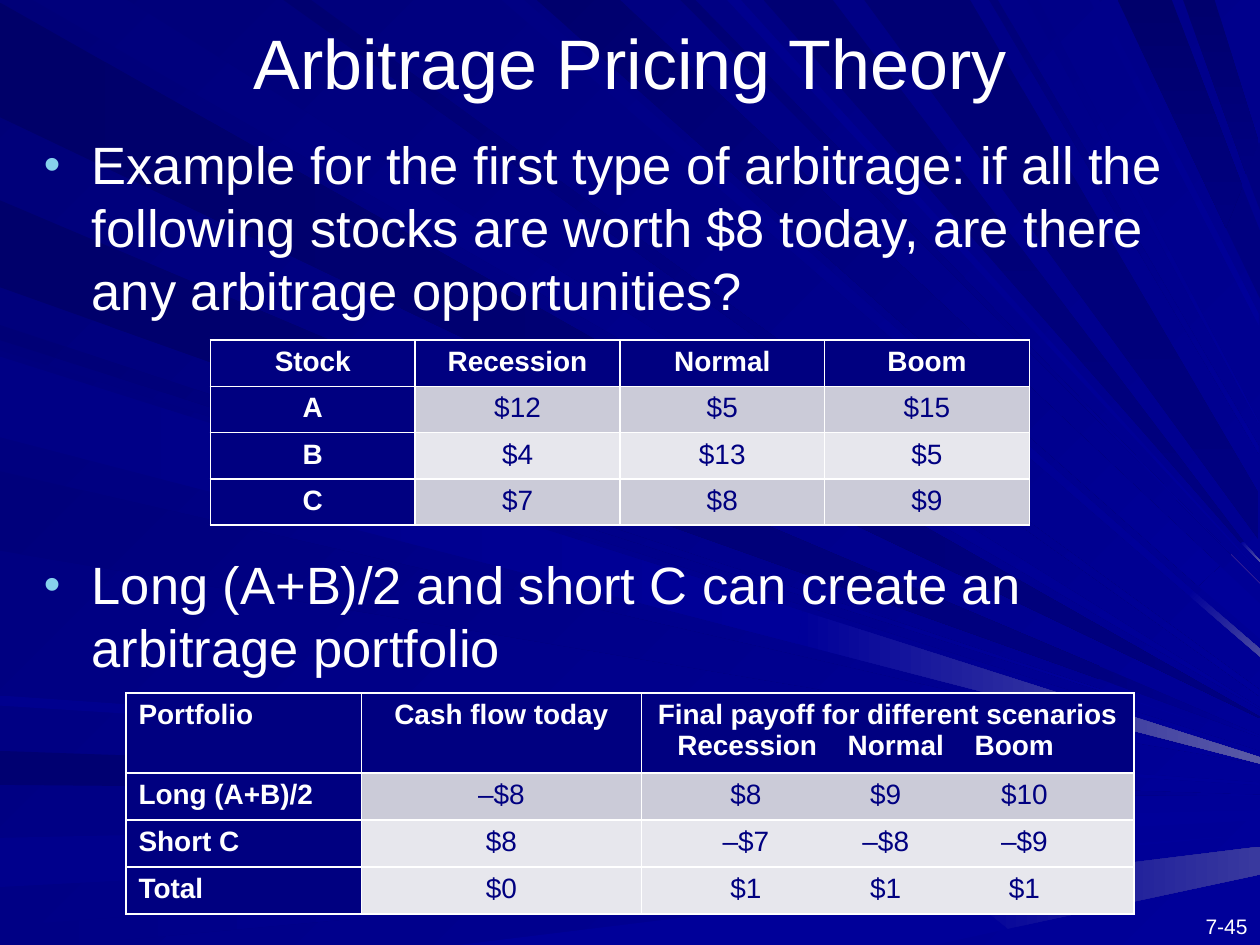
from typing import NamedTuple, Optional

from lxml import etree
from pptx import Presentation
from pptx import util as u
from pptx.dml.color import RGBColor
from pptx.enum import text
from pptx.oxml.ns import qn

COLORS = {
    "white": "FFFFFF", "navy": "000080", "blue": "000099", "night": "000078",
    "bullet": "86D1EC", "band_dark": "CBCBD8", "band_light": "E7E7ED",
}
FONT = "Arial"
SLIDE_W, SLIDE_H = u.Inches(10), u.Inches(7.5)
UNIT = SLIDE_W // 1000  # all lengths below are thousandths of the slide width


class Ray(NamedTuple):
    outline: str
    start: str
    end: Optional[str] = None
    angle: int = 0


class Box(NamedTuple):
    left: int
    top: int
    width: int
    height: int


class Style(NamedTuple):
    size: int
    color: str = "white"
    bold: bool = False


class Grid(NamedTuple):
    box: Box
    columns: tuple
    rows: tuple
    cells: tuple
    bands: tuple
    label_align: text.PP_ALIGN


LEFT, CENTER, RIGHT = text.PP_ALIGN.LEFT, text.PP_ALIGN.CENTER, text.PP_ALIGN.RIGHT
NAVY, BLUE = COLORS["navy"], COLORS["blue"]

# Background rays, from back to front
RAYS = (
    Ray("556,317 0,2 0,93 529,345 1000,570 1000,569", "000069", NAVY),
    Ray("577,298 101,0 26,0 563,310 1000,563 1000,562", "00007B", BLUE, 45),
    Ray("0,623 701,629 701,621 0,596", "000071", NAVY),
    Ray("1000,632 1000,631 701,621 701,629", NAVY, BLUE),
    Ray("0,704 831,660 831,647 0,665", "00008C", BLUE),
    Ray("1000,651 1000,643 831,647 831,660", BLUE),
    Ray("1000,662 628,689 628,697", BLUE),
    Ray("0,750 54,750 628,697 628,689 0,735", "000085", BLUE),
    Ray("742,750 801,737 756,702 364,750", BLUE),
    Ray("1000,694 1000,672 756,702 800,737", BLUE, "39399E"),
    Ray("1000,589 873,547 873,548", BLUE),
    Ray("0,270 873,548 873,547 0,258", "000076", BLUE, 45),
    Ray("1000,585 1000,584 873,529 873,539", NAVY, BLUE),
    Ray("0,228 873,539 873,529 0,159", "00006B", NAVY),
    Ray("398,0 944,473 947,469 416,0", "000083", BLUE, 45),
    Ray("1000,521 1000,515 947,469 944,473", BLUE, "4A4AA1", 45),
    Ray("1000,507 1000,479 968,449 951,465", BLUE),
    Ray("426,0 951,465 968,449 492,0", "00006D", BLUE, 45),
    Ray("1000,463 977,440 977,440", "FF9999"),
    Ray("540,0 977,440 977,440 552,0", "000073", BLUE, 45),
    Ray("606,0 985,431 987,430 661,0", "000073", NAVY, 90),
    Ray("1000,446 1000,445 987,430 985,431", BLUE, "5A5AA6", 45),
    Ray("1000,237 1000,183 986,148 973,181", NAVY),
    Ray("887,0 973,181 986,148 930,0", "00006B", NAVY, 90),
    Ray("964,0 939,0 989,138 999,113", "00006D", NAVY, 90),
    Ray("989,138 1000,167 1000,114 999,113", NAVY),
    Ray("0,342 999,602 999,596 0,278", "00007E", BLUE, 45),
    Ray("0,437 999,606 999,605 0,374", "00007B", BLUE, 45),
    Ray("0,560 999,623 999,621 0,552", "00008E", BLUE),
    Ray("225,0 999,552 999,547 247,0", "000070", BLUE, 45),
    Ray("577,0 999,454 999,453 588,0", "00008E", BLUE, 45),
    Ray("770,0 686,0 999,428 999,390 998,390", "000073", NAVY, 90),
    Ray("785,0 999,360 999,354 792,0", "000078", BLUE, 45),
    Ray("815,0 999,336 999,335 824,0", "000085", BLUE, 45),
    Ray("999,249 872,0 865,0 999,258", "00008A", BLUE, 45),
    Ray("0,283 0,347 633,511 635,498 637,485", "000085", BLUE),
    Ray("1000,601 637,485 635,498 633,511 1000,606", BLUE, "5A5AA6"),
)

STOCKS = Grid(
    Box(167, 270, 650, 139), (1, 1, 1, 1), (1, 1, 1, 1),
    (("Stock", "Recession", "Normal", "Boom"),
     ("A", "$12", "$5", "$15"),
     ("B", "$4", "$13", "$5"),
     ("C", "$7", "$8", "$9")),
    ("band_dark", "band_light", "band_dark"), CENTER)

PORTFOLIO = Grid(
    Box(100, 550, 800, 172), (187, 222, 391), (60, 37.5, 37.5, 37.5),
    (("Portfolio", "Cash flow today",
      "Final payoff for different scenarios\n\tRecession\tNormal\tBoom"),
     ("Long (A+B)/2", "–$8", "\t$8\t$9\t$10"),
     ("Short C", "$8", "\t–$7\t–$8\t–$9"),
     ("Total", "$0", "\t$1\t$1\t$1")),
    ("band_dark", "band_light", "band_light"), LEFT)
HEADER_STOPS, PAYOFF_STOPS = (74, 192, 286), (73, 184, 294)


def paint(fill, start: str, end: Optional[str] = None, angle: int = 0) -> None:
    if end is None:
        fill.solid()
        fill.fore_color.rgb = RGBColor.from_string(start)
        return
    fill.gradient()
    fill.gradient_angle = -angle % 360  # clockwise to counter-clockwise
    for stop, color in zip(fill.gradient_stops, (start, end)):
        stop.color.rgb = RGBColor.from_string(color)


def draw_ray(slide, ray: Ray) -> None:
    points = [tuple(map(int, pair.split(","))) for pair in ray.outline.split()]
    builder = slide.shapes.build_freeform(*points[0], scale=UNIT)
    builder.add_line_segments(points[1:], close=True)
    shape = builder.convert_to_shape()
    shape.shadow.inherit = False
    shape.line.fill.background()
    paint(shape.fill, ray.start, ray.end, ray.angle)


def add_run(paragraph, words: str, style: Style) -> None:
    run = paragraph.add_run()
    run.text = words
    run.font.name, run.font.size, run.font.bold = FONT, u.Pt(style.size), style.bold
    run.font.color.rgb = RGBColor.from_string(COLORS[style.color])


def add_text(slide, box: Box, lines: tuple, style: Style, align=LEFT,
             anchor=text.MSO_ANCHOR.TOP) -> list:
    frame = slide.shapes.add_textbox(*(n * UNIT for n in box)).text_frame
    frame.word_wrap, frame.vertical_anchor = True, anchor
    for index, words in enumerate(lines):
        paragraph = frame.add_paragraph() if index else frame.paragraphs[0]
        paragraph.alignment = align
        add_run(paragraph, words, style)
    return list(frame.paragraphs)


def add_bullet(paragraph) -> None:
    props = paragraph._p.get_or_add_pPr()
    props.set("marL", str(38 * UNIT))
    props.set("indent", str(-38 * UNIT))
    color = etree.SubElement(props, qn("a:buClr"))
    etree.SubElement(color, qn("a:srgbClr"), val=COLORS["bullet"])
    etree.SubElement(props, qn("a:buSzPct"), val="90000")
    etree.SubElement(props, qn("a:buFont"), typeface=FONT)
    etree.SubElement(props, qn("a:buChar"), char="•")


def add_stops(paragraph, stops: tuple) -> None:
    tabs = etree.SubElement(paragraph._p.get_or_add_pPr(), qn("a:tabLst"))
    for stop in stops:
        etree.SubElement(tabs, qn("a:tab"), pos=str(stop * UNIT), algn="ctr")


def add_borders(cell) -> None:
    for side in ("a:lnL", "a:lnR", "a:lnT", "a:lnB"):
        line = etree.SubElement(cell._tc.get_or_add_tcPr(), qn(side), w=str(u.Pt(1)))
        fill = etree.SubElement(line, qn("a:solidFill"))
        etree.SubElement(fill, qn("a:srgbClr"), val=COLORS["white"])


def fill_cell(cell, words: str, row: int, column: int, grid: Grid) -> None:
    is_label = row == 0 or column == 0
    style = Style(16, "white", True) if is_label else Style(16, "navy")
    add_borders(cell)
    paint(cell.fill, COLORS["navy" if is_label else grid.bands[row - 1]])
    for index, line in enumerate(words.split("\n")):
        paragraph = cell.text_frame.add_paragraph() if index else cell.text_frame.paragraphs[0]
        paragraph.alignment = grid.label_align if column == 0 else CENTER
        if "\t" in line:
            paragraph.alignment = LEFT
            add_stops(paragraph, PAYOFF_STOPS if row else HEADER_STOPS)
        add_run(paragraph, line, style)


def draw_grid(slide, grid: Grid) -> None:
    table = slide.shapes.add_table(len(grid.rows), len(grid.columns),
                                   *(n * UNIT for n in grid.box)).table
    for column, share in zip(table.columns, grid.columns):
        column.width = int(grid.box.width * UNIT * share / sum(grid.columns))
    for row, share in zip(table.rows, grid.rows):
        row.height = int(grid.box.height * UNIT * share / sum(grid.rows))
    for r, line in enumerate(grid.cells):
        for c, words in enumerate(line):
            fill_cell(table.cell(r, c), words, r, c, grid)


def main() -> None:
    deck = Presentation()
    deck.slide_width, deck.slide_height = SLIDE_W, SLIDE_H
    slide = deck.slides.add_slide(deck.slide_layouts[6])

    # Backdrop
    paint(slide.background.fill, COLORS["night"], BLUE, 45)
    for ray in RAYS:
        draw_ray(slide, ray)

    # Page number, title and bullets
    add_text(slide, Box(917, 720, 83, 30), ("7-45",), Style(12), RIGHT)
    add_text(slide, Box(0, 4, 1000, 83), ("Arbitrage Pricing Theory",), Style(40),
             CENTER, text.MSO_ANCHOR.BOTTOM)
    example, answer = add_text(slide, Box(25, 100, 950, 570), (
        "Example for the first type of arbitrage: if all the following stocks "
        "are worth $8 today, are there any arbitrage opportunities?",
        "Long (A+B)/2 and short C can create an arbitrage portfolio"), Style(30))
    for paragraph in (example, answer):
        add_bullet(paragraph)
    answer.space_before = u.Pt(132)  # leaves room for the stock table

    # Tables
    for grid in (STOCKS, PORTFOLIO):
        draw_grid(slide, grid)
    deck.save("out.pptx")


if __name__ == "__main__":
    main()
